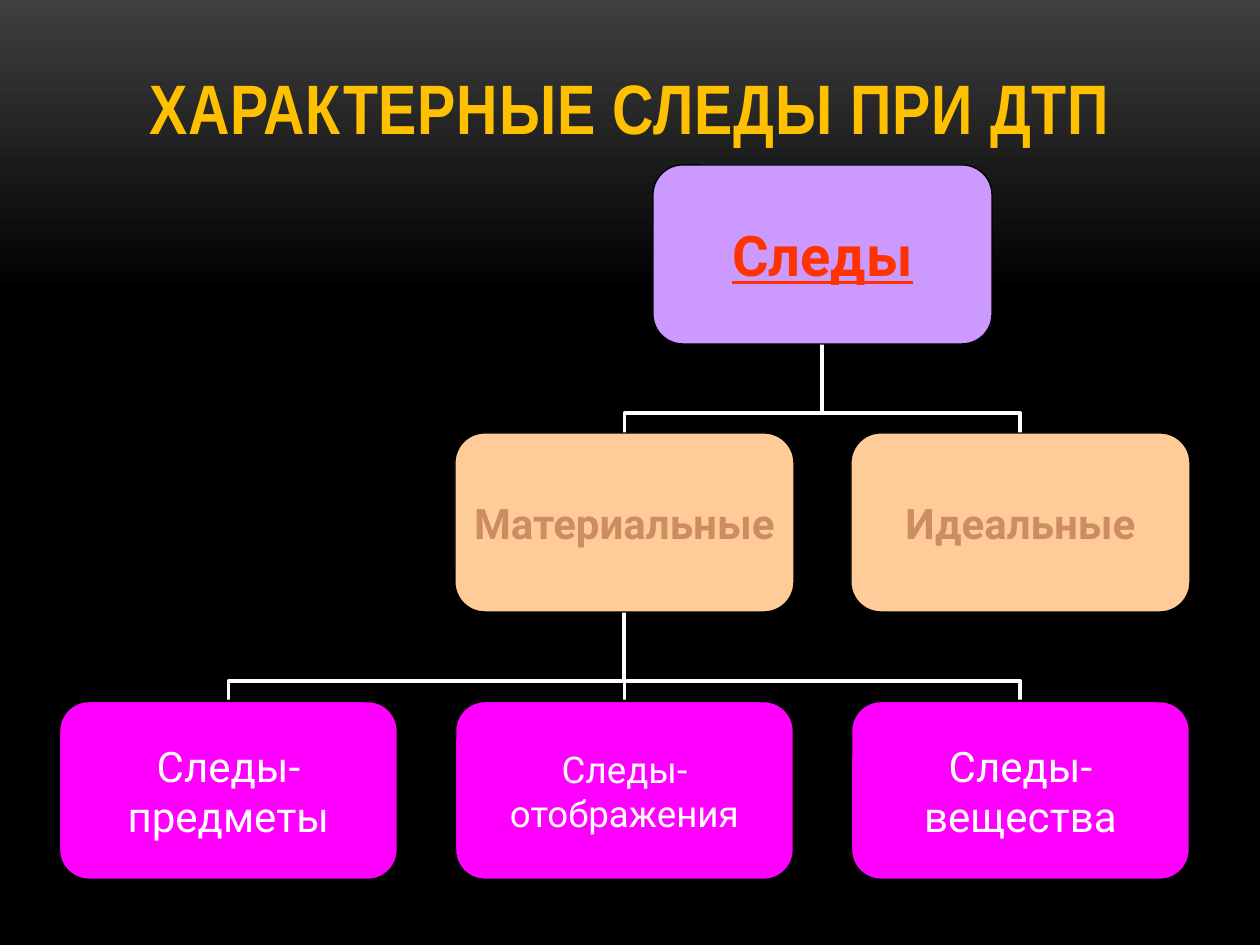
from copy import deepcopy

from lxml.etree import SubElement
from pptx import Presentation
from pptx.dml.color import RGBColor
from pptx.enum.shapes import MSO_CONNECTOR as Connector, MSO_SHAPE as Shape
from pptx.enum.text import MSO_ANCHOR as Anchor, MSO_AUTO_SIZE as AutoSize, PP_ALIGN as Align
from pptx.oxml.ns import qn
from pptx.util import Emu, Pt

PX_PER_INCH = 126
BOX_WIDTH, BOX_HEIGHT = 339, 179
LEFT, TOP = 59, 165
COLUMN_STEP, ROW_STEP = 396, 268
BEND = 22300

BLACK = RGBColor(0x00, 0x00, 0x00)
WHITE = RGBColor(0xFF, 0xFF, 0xFF)
GREY = RGBColor(0x3F, 0x3F, 0x3F)
GOLD = RGBColor(0xFF, 0xC0, 0x00)
LILAC = RGBColor(0xCC, 0x99, 0xFF)
RED = RGBColor(0xFF, 0x33, 0x00)
PEACH = RGBColor(0xFF, 0xCC, 0x99)
BROWN = RGBColor(0xCC, 0x8E, 0x60)
MAGENTA = RGBColor(0xFF, 0x00, 0xFF)


def px(value):
    return Emu(round(value * 914400 / PX_PER_INCH))


def paint_background(page):
    fill = page.background.fill
    fill.gradient()
    fill.gradient_angle = 270
    start, end = fill.gradient_stops
    start.color.rgb, start.position = GREY, 0
    end.color.rgb, end.position = BLACK, 0.31
    last = deepcopy(end._gs)
    last.set("pos", "100000")
    end._gs.addnext(last)


def write(frame, text, font_name, size, color, bold=False, underline=False):
    para = frame.paragraphs[0]
    para.text = text
    para.alignment = Align.CENTER
    font = para.font
    font.name, font.size, font.bold = font_name, Pt(size), bold
    font.color.rgb = color
    if underline:
        font.underline = True
    return para


def add_title(page, text):
    title = page.shapes.title
    title.left, title.top, title.width, title.height = map(px, (63, 40, 1134, 115))
    frame = title.text_frame
    frame.auto_size = AutoSize.NONE
    frame.vertical_anchor = Anchor.BOTTOM
    para = write(frame, text, "Arial Narrow", 40, GOLD, bold=True)
    para.font._rPr.set("spc", "50")


def add_box(page, column, row, text, size, fill, color, bold=True, underline=False,
            border=0.75, wrap=False):
    box = page.shapes.add_shape(
        Shape.ROUNDED_RECTANGLE,
        px(LEFT + column * COLUMN_STEP), px(TOP + row * ROW_STEP),
        px(BOX_WIDTH), px(BOX_HEIGHT))
    box.shadow.inherit = False
    box.adjustments[0] = 0.167
    box.fill.solid()
    box.fill.fore_color.rgb = fill
    box.line.color.rgb = BLACK
    box.line.width = Pt(border)
    frame = box.text_frame
    frame.margin_left = frame.margin_top = frame.margin_right = frame.margin_bottom = 0
    frame.vertical_anchor = Anchor.MIDDLE
    frame.word_wrap = wrap
    write(frame, text, "Roboto", size, color, bold, underline)
    return box


def middle(box):
    return box.left + box.width // 2


def add_elbow(page, child, parent):
    rise = child.top - (parent.top + parent.height)
    span = abs(middle(child) - middle(parent))
    left = (middle(child) + middle(parent) - rise) // 2
    top = child.top - (rise + span) // 2
    line = page.shapes.add_connector(Connector.ELBOW, left, top, left + rise, top + span)
    xfrm = line._element.spPr.find(qn("a:xfrm"))
    if middle(child) > middle(parent):
        xfrm.set("rot", "5400000")
        xfrm.set("flipH", "1")
    else:
        xfrm.set("rot", "16200000")
    values = line._element.spPr.find(qn("a:prstGeom")).find(qn("a:avLst"))
    SubElement(values, qn("a:gd"), name="adj1", fmla=f"val {BEND}")
    return line


def add_straight(page, child, parent):
    line = page.shapes.add_connector(
        Connector.STRAIGHT, middle(child), child.top,
        middle(parent), parent.top + parent.height)
    line.begin_connect(child, 0)
    line.end_connect(parent, 2)
    return line


def link(page, child, parent):
    add_line = add_straight if middle(child) == middle(parent) else add_elbow
    line = add_line(page, child, parent)
    line.line.color.rgb = WHITE
    line.line.width = Pt(2.25)
    SubElement(line._element.spPr, qn("a:effectLst"))
    page.shapes.title._element.addnext(line._element)


def main():
    deck = Presentation()
    deck.slide_width, deck.slide_height = px(1260), px(945)
    page = deck.slides.add_slide(deck.slide_layouts[5])
    paint_background(page)
    add_title(page, "ХАРАКТЕРНЫЕ СЛЕДЫ ПРИ ДТП")

    root = add_box(page, 1.5, 0, "Следы", 32, LILAC, RED, underline=True)
    material, ideal = [
        add_box(page, column, 1, text, 24, PEACH, BROWN)
        for column, text in enumerate(("Материальные", "Идеальные"), 1)]
    kinds = (("Следы-предметы", 24), ("Следы-отображения", 21), ("Следы-вещества", 24))
    traces = [
        add_box(page, column, 2, text, size, MAGENTA, WHITE, bold=False, border=1.5, wrap=True)
        for column, (text, size) in enumerate(kinds)]

    for child in (material, ideal):
        link(page, child, root)
    for child in traces:
        link(page, child, material)
    deck.save("out.pptx")


if __name__ == "__main__":
    main()
